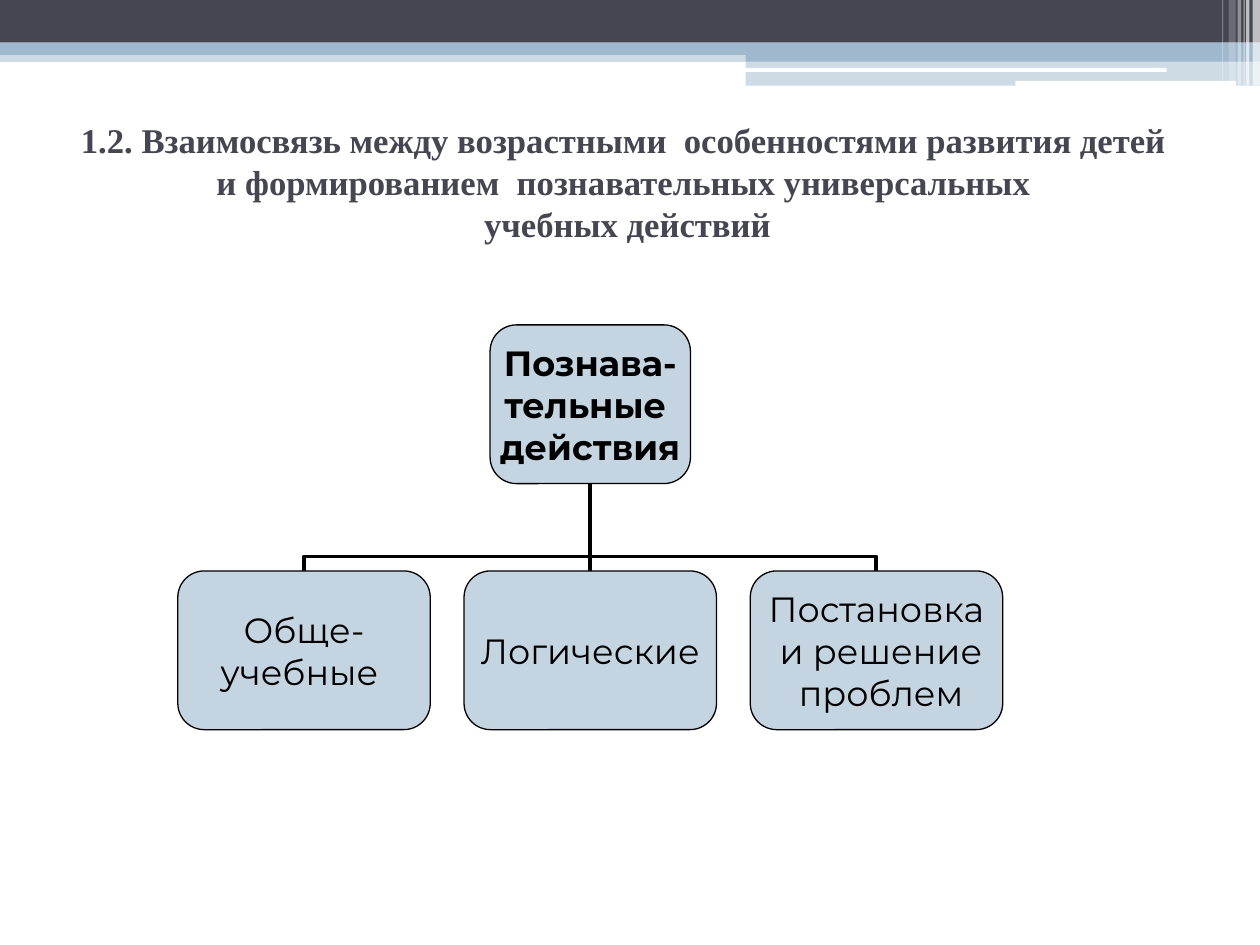
from dataclasses import dataclass
from lxml.etree import SubElement
from pptx import Presentation
from pptx.dml.color import RGBColor
from pptx.enum.shapes import MSO_CONNECTOR, MSO_SHAPE
from pptx.enum.text import MSO_ANCHOR, PP_ALIGN
from pptx.oxml.ns import qn
from pptx.util import Cm, Pt


@dataclass(frozen=True)
class Theme:
    dark: str = "464653"
    blue: str = "9FB8CD"
    box: str = "C5D4E1"
    white: str = "FFFFFF"
    black: str = "000000"
    title_font: str = "Times New Roman"
    body_font: str = "Montserrat"
    title_size: float = 19.8
    body_size: float = 20
    border: float = 0.75
    link: float = 2.25


theme = Theme()


def add_block(s, kind, box, color, alpha=100):
    sp = s.shapes.add_shape(kind, *map(Cm, box))
    sp.shadow.inherit = False
    sp.fill.solid()
    sp.fill.fore_color.rgb = RGBColor.from_string(color)
    sp.line.fill.background()
    if alpha < 100:
        clr = sp._element.spPr.find(qn("a:solidFill"))[0]
        SubElement(clr, qn("a:alpha"), val=str(alpha * 1000))
    return sp


def add_link(s, kind, x1, y1, x2, y2):
    cxn = s.shapes.add_connector(kind, Cm(x1), Cm(y1), Cm(x2), Cm(y2))
    cxn.line.color.rgb = RGBColor.from_string(theme.black)
    cxn.line.width = Pt(theme.link)
    SubElement(cxn._element.spPr, qn("a:effectLst"))
    return cxn


prs = Presentation()
prs.slide_width, prs.slide_height = Cm(25.4), Cm(19.05)
s = prs.slides.add_slide(prs.slide_layouts[5])

bands = [
    (0, 1.02, 25.4, 0.23, theme.blue, 50),
    (0, 0, 25.4, 0.86, theme.dark, 100),
    (0, 0.86, 25.4, 0.25, theme.blue, 100),
    (15.03, 0.99, 10.37, 0.25, theme.blue, 100),
    (15.03, 1.23, 10.37, 0.5, theme.blue, 50),
]
for *box, color, alpha in bands:
    add_block(s, MSO_SHAPE.RECTANGLE, box, color, alpha)

for box in [(15.01, 1.37, 8.51, 0.08), (20.47, 1.63, 4.45, 0.1)]:
    add_block(s, MSO_SHAPE.ROUNDED_RECTANGLE, box, theme.white)

stripes = [
    (25.25, 0.15, 1.73, 65),
    (25.12, 0.07, 1.73, 65),
    (25.07, 0.02, 1.73, 60),
    (24.95, 0.07, 1.73, 40),
    (24.77, 0.14, 1.63, 20),
    (24.64, 0.02, 1.63, 30),
]
for x, w, h, alpha in stripes:
    add_block(s, MSO_SHAPE.RECTANGLE, (x, 0, w, h), theme.white, alpha)

title = s.shapes.title
title.left, title.top, title.width, title.height = Cm(1.09), Cm(2.26), Cm(22.94), Cm(2.8)
tf = title.text_frame
tf.word_wrap = True
tf.vertical_anchor = MSO_ANCHOR.MIDDLE
tf.text = (
    "1.2. Взаимосвязь между возрастными  особенностями развития детей и "
    "формированием  познавательных универсальных\v учебных действий"
)
p = tf.paragraphs[0]
p.alignment = PP_ALIGN.CENTER
p.font.name = theme.title_font
p.font.size = Pt(theme.title_size)
p.font.bold = True
p.font.color.rgb = RGBColor.from_string(theme.dark)

root_x, root_top, root_w = 11.9, 6.55, 4.04
child_top, child_w, step = 11.51, 5.09, 5.77
box_h = 3.2
root_bottom = root_top + box_h
rise = child_top - root_bottom
mid_y = root_bottom + rise / 2

for side in (1, 0, -1):
    if side == 0:
        add_link(s, MSO_CONNECTOR.STRAIGHT, root_x, child_top, root_x, root_bottom)
        continue
    mid_x = root_x + side * step / 2
    cxn = add_link(s, MSO_CONNECTOR.ELBOW,
                   mid_x + side * rise / 2, mid_y - step / 2,
                   mid_x - side * rise / 2, mid_y + step / 2)
    spPr = cxn._element.spPr
    spPr.get_or_add_xfrm().set("rot", "5400000" if side > 0 else "16200000")
    av = spPr.find(qn("a:prstGeom")).find(qn("a:avLst"))
    SubElement(av, qn("a:gd"), name="adj1", fmla="val 16600")

nodes = [
    (root_x, root_top, root_w, True, "Познава-\nтельные \nдействия"),
    (root_x - step, child_top, child_w, False, "Обще-\nучебные "),
    (root_x, child_top, child_w, False, "Логические"),
    (root_x + step, child_top, child_w, False, "Постановка\n и решение\n проблем"),
]
for x, y, w, bold, text in nodes:
    sp = add_block(s, MSO_SHAPE.ROUNDED_RECTANGLE, (x - w / 2, y, w, box_h), theme.box)
    sp.line.color.rgb = RGBColor.from_string(theme.black)
    sp.line.width = Pt(theme.border)
    tf = sp.text_frame
    tf.margin_left = tf.margin_right = tf.margin_top = tf.margin_bottom = 0
    tf.word_wrap = False
    tf.vertical_anchor = MSO_ANCHOR.MIDDLE
    tf.text = text
    for p in tf.paragraphs:
        p.alignment = PP_ALIGN.CENTER
        p.font.name = theme.body_font
        p.font.size = Pt(theme.body_size)
        p.font.bold = bold
        p.font.color.rgb = RGBColor.from_string(theme.black)

prs.save("out.pptx")
